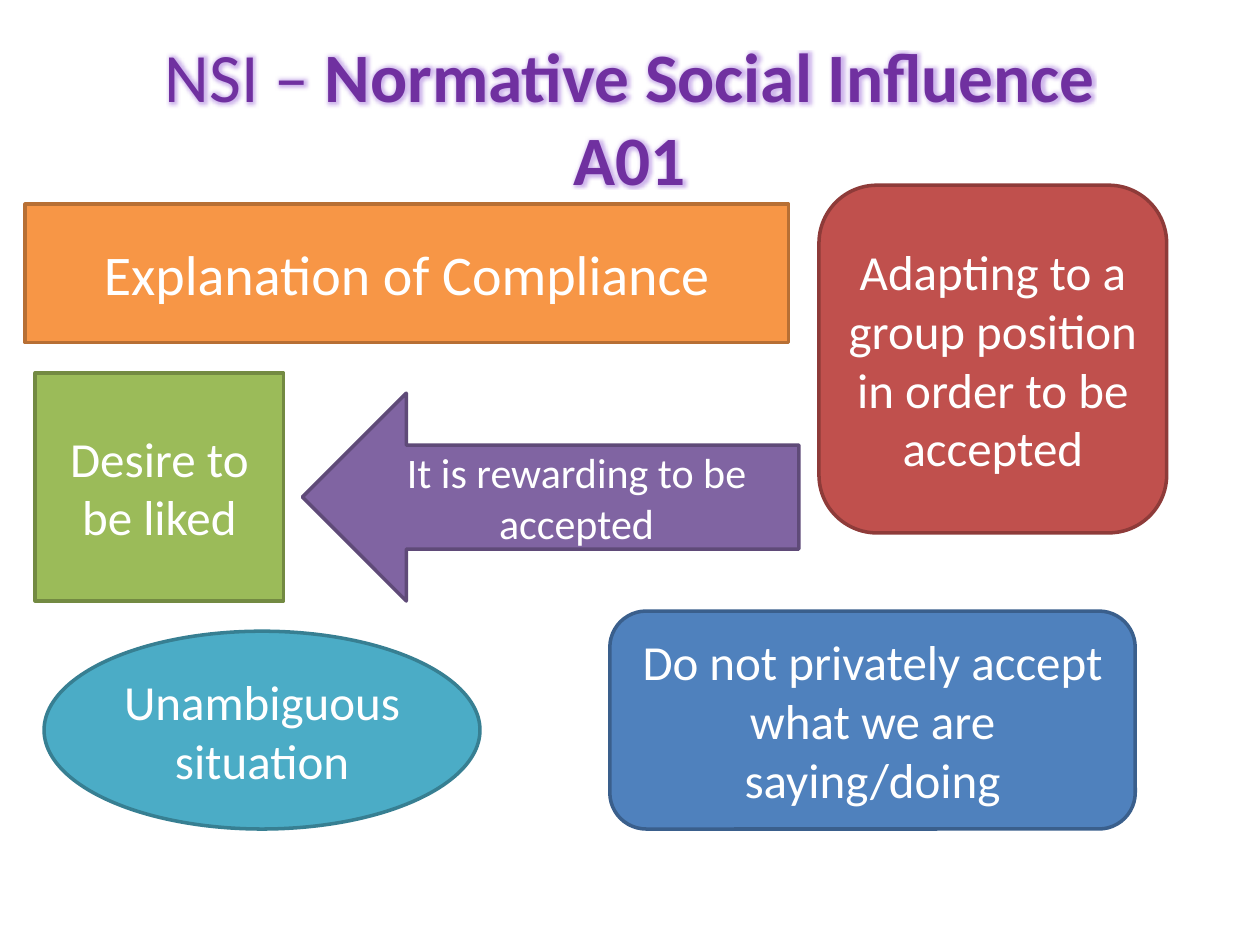
from lxml.etree import SubElement
from pptx import Presentation
from pptx.dml.color import RGBColor
from pptx.enum.shapes import MSO_SHAPE
from pptx.enum.text import MSO_ANCHOR, PP_ALIGN
from pptx.oxml.ns import qn
from pptx.util import Inches, Pt

COLORS = {
    "title": "7030A0", "glow": "8547CF", "text": "FFFFFF",
    "orange": "F79646", "orange_line": "B76F34",
    "green": "9BBB59", "green_line": "738A42",
    "red": "C0504D", "red_line": "8E3B39",
    "teal": "4BACC6", "teal_line": "377F92",
    "purple": "8064A2", "purple_line": "5F4A78",
    "blue": "4F81BD", "blue_line": "3A5F8C",
}


class SlideBuilder:
    font_name = "Calibri"
    line_width = Pt(2)

    def __init__(self, slide):
        self.slide = slide

    def color(self, name):
        return RGBColor.from_string(COLORS[name])

    def centre(self, text_frame):
        """Wrap and centre the frame both ways; return its first paragraph."""
        text_frame.word_wrap = True
        text_frame.vertical_anchor = MSO_ANCHOR.MIDDLE
        paragraph = text_frame.paragraphs[0]
        paragraph.alignment = PP_ALIGN.CENTER
        return paragraph

    def run(self, paragraph, text, size, color, bold=False):
        run = paragraph.add_run()
        run.text = text
        run.font.size = Pt(size)
        run.font.bold = bold
        run.font.color.rgb = self.color(color)
        run.font.name = self.font_name
        return run

    def glow(self, run):
        properties = run.font._element
        effects = SubElement(properties, qn("a:effectLst"))
        glow = SubElement(effects, qn("a:glow"), rad=str(Pt(5)))
        color = SubElement(glow, qn("a:srgbClr"), val=COLORS["glow"])
        SubElement(color, qn("a:alpha"), val="40000")
        properties.find(qn("a:solidFill")).addnext(effects)

    def title(self, box, lines, size):
        """Each line is a list of (text, bold) pairs."""
        text_box = self.slide.shapes.add_textbox(*map(Inches, box))
        paragraph = self.centre(text_box.text_frame)
        for index, line in enumerate(lines):
            if index:
                paragraph.add_line_break()
            for text, bold in line:
                self.glow(self.run(paragraph, text, size, "title", bold))

    def block(self, kind, box, color, text, size=28):
        shape = self.slide.shapes.add_shape(kind, *map(Inches, box))
        shape.shadow.inherit = False
        shape.fill.solid()
        shape.fill.fore_color.rgb = self.color(color)
        shape.line.color.rgb = self.color(f"{color}_line")
        shape.line.width = self.line_width
        self.run(self.centre(shape.text_frame), text, size, "text")


def main():
    presentation = Presentation()
    presentation.slide_width = Inches(10)
    presentation.slide_height = Inches(7.5)
    builder = SlideBuilder(presentation.slides.add_slide(presentation.slide_layouts[6]))

    builder.title(
        (0.5, 0.3, 9, 1.25),
        [[("NSI – ", False), ("Normative Social Influence", True)], [("A01", True)]],
        39.6,
    )
    builder.block(MSO_SHAPE.RECTANGLE, (0.2, 1.62, 6.06, 1.1), "orange",
                  "Explanation of Compliance", 32)
    builder.block(MSO_SHAPE.RECTANGLE, (0.28, 2.96, 1.97, 1.81), "green",
                  "Desire to be liked")
    builder.block(MSO_SHAPE.ROUNDED_RECTANGLE, (6.5, 1.47, 2.76, 2.76), "red",
                  "Adapting to a group position in order to be accepted")
    builder.block(MSO_SHAPE.OVAL, (0.35, 5.01, 3.46, 1.57), "teal",
                  "Unambiguous situation")
    builder.block(MSO_SHAPE.LEFT_ARROW, (2.4, 3.12, 3.94, 1.65), "purple",
                  "It is rewarding to be accepted", 24)
    builder.block(MSO_SHAPE.ROUNDED_RECTANGLE, (4.84, 4.85, 4.17, 1.73), "blue",
                  "Do not privately accept what we are saying/doing")
    presentation.save("out.pptx")


if __name__ == "__main__":
    main()
